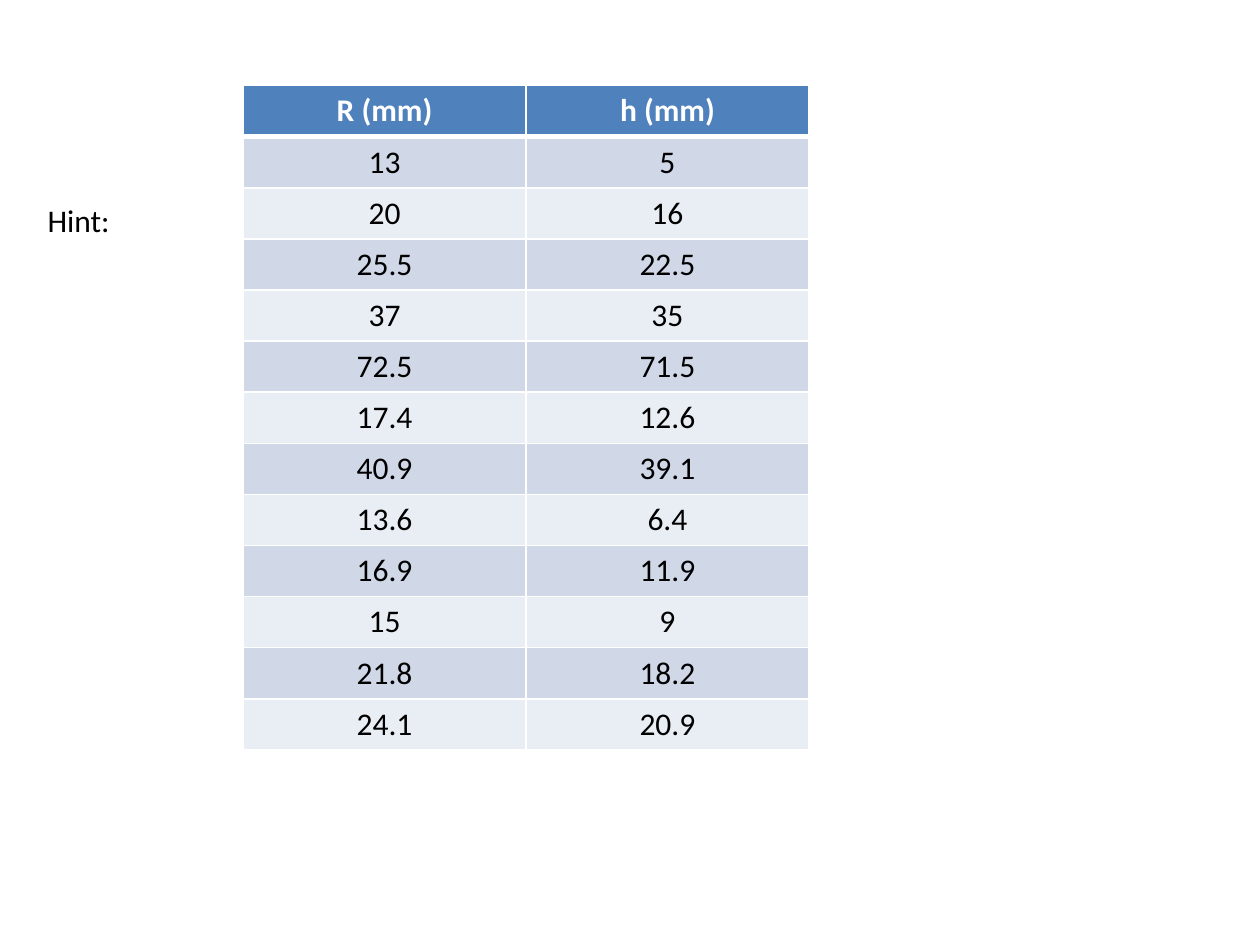
import pptx
import pptx.util
import pptx.dml.color
import pptx.enum.text
import pptx.oxml.ns
import lxml.etree

HINT = "Hint:"
HEADINGS = ("R (mm)", "h (mm)")
MEASUREMENTS = [
    ("13", "5"),
    ("20", "16"),
    ("25.5", "22.5"),
    ("37", "35"),
    ("72.5", "71.5"),
    ("17.4", "12.6"),
    ("40.9", "39.1"),
    ("13.6", "6.4"),
    ("16.9", "11.9"),
    ("15", "9"),
    ("21.8", "18.2"),
    ("24.1", "20.9"),
]
COLOURS = {
    "header": "4F81BD",
    "odd": "D0D8E8",
    "even": "E9EDF4",
    "white": "FFFFFF",
    "black": "000000",
}
Inches = pptx.util.Inches
Pt = pptx.util.Pt


def colour(name):
    return pptx.dml.color.RGBColor.from_string(COLOURS[name])


def style_text(para, ink, bold=False):
    para.font.name = "Calibri"
    para.font.size = Pt(18)
    para.font.bold = bold
    para.font.color.rgb = colour(ink)


def add_border(cell, side, points):
    qn = pptx.oxml.ns.qn
    properties = cell._tc.get_or_add_tcPr()
    line = lxml.etree.SubElement(properties, qn("a:ln" + side), w=str(Pt(points)))
    fill = lxml.etree.SubElement(line, qn("a:solidFill"))
    lxml.etree.SubElement(fill, qn("a:srgbClr"), val=COLOURS["white"])


deck = pptx.Presentation()
deck.slide_width, deck.slide_height = Inches(10), Inches(7.5)
page = deck.slides.add_slide(deck.slide_layouts[6])

# Table of measurements
rows = [HEADINGS] + MEASUREMENTS
table = page.shapes.add_table(
    len(rows), len(HEADINGS), Inches(1.93), Inches(0.68), Inches(4.49), Inches(5.27)
).table
for r, values in enumerate(rows):
    heading = r == 0
    band = "header" if heading else "odd" if r % 2 else "even"
    for c, value in enumerate(values):
        cell = table.cell(r, c)
        # Thick rule between the heading and the first row
        widths = {"L": 1, "R": 1, "T": 3 if r == 1 else 1, "B": 3 if heading else 1}
        for side, points in widths.items():
            add_border(cell, side, points)
        cell.fill.solid()
        cell.fill.fore_color.rgb = colour(band)
        cell.text = value
        para = cell.text_frame.paragraphs[0]
        para.alignment = pptx.enum.text.PP_ALIGN.CENTER
        style_text(para, "white" if heading else "black", bold=heading)

# Hint label
box = page.shapes.add_textbox(Inches(0.28), Inches(1.55), Inches(0.7), Inches(0.4))
box.text_frame.word_wrap = False
box.text_frame.auto_size = pptx.enum.text.MSO_AUTO_SIZE.SHAPE_TO_FIT_TEXT
box.text_frame.text = HINT
style_text(box.text_frame.paragraphs[0], "black")

deck.save("out.pptx")
